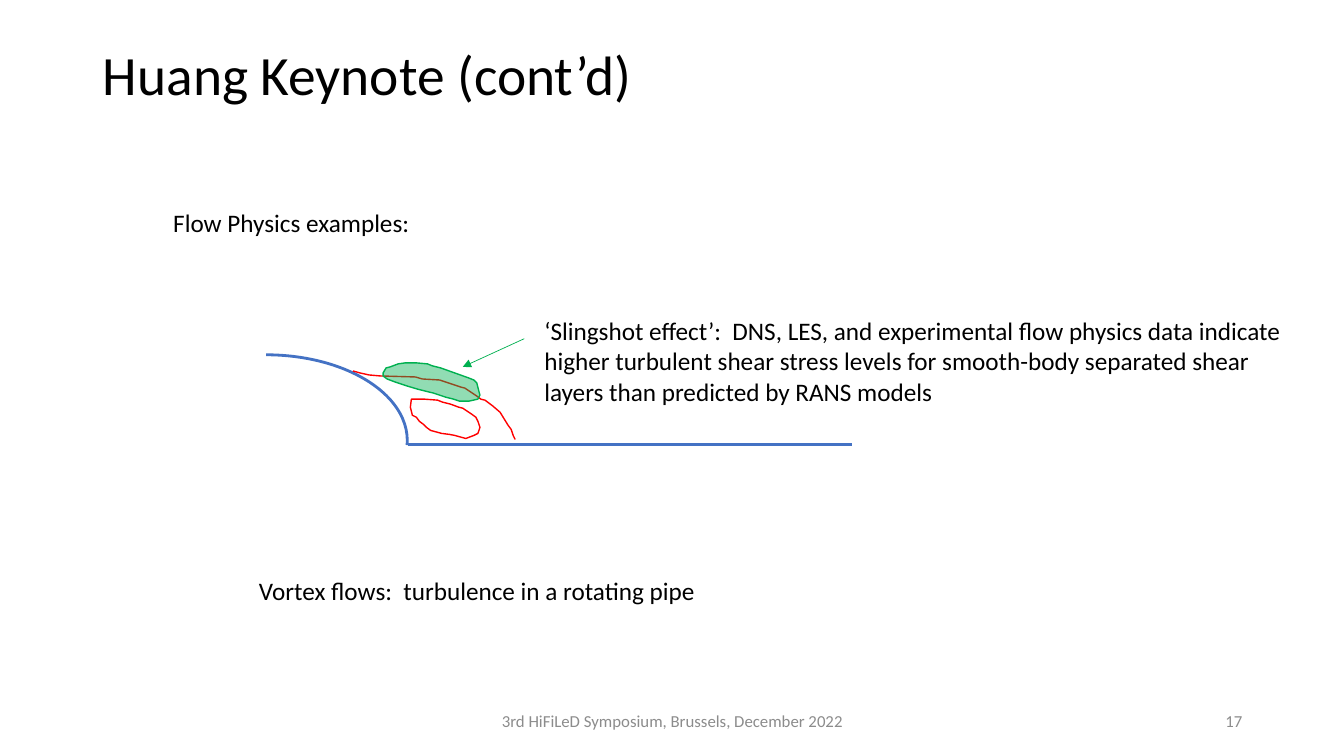
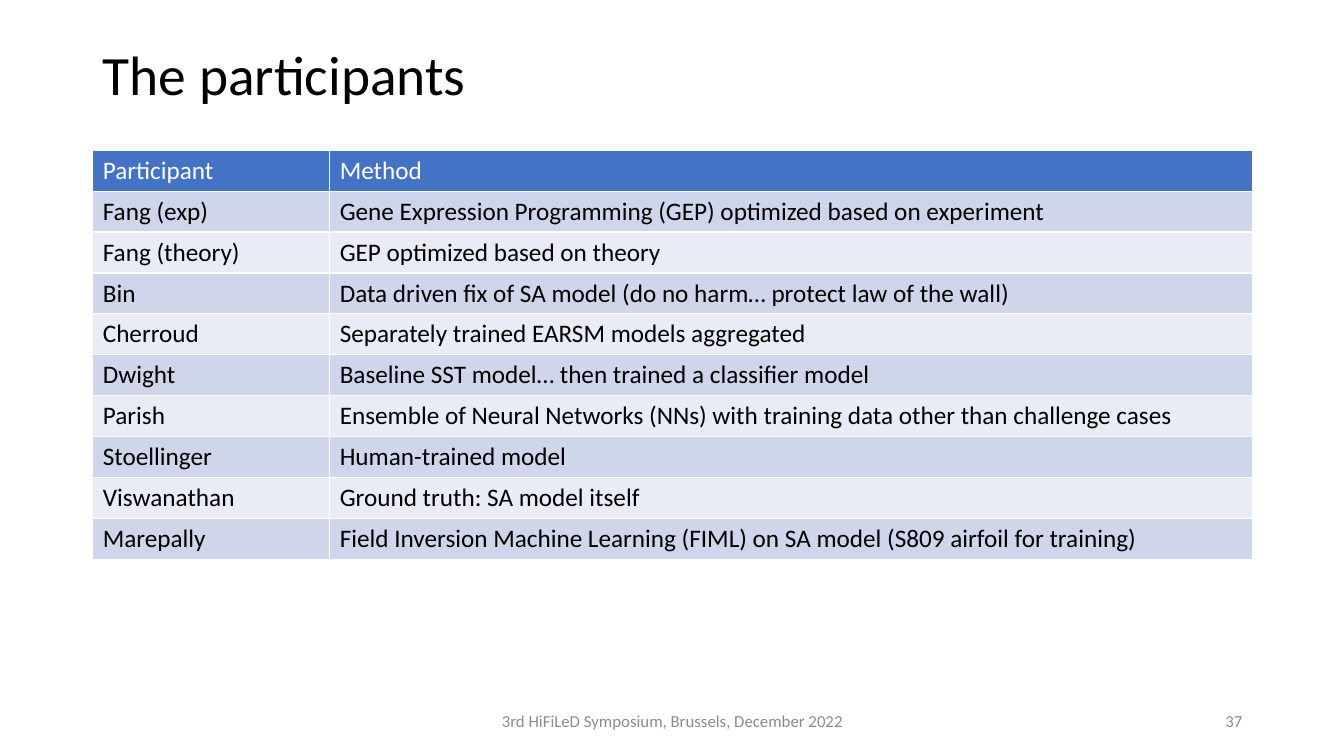
from lxml import etree
from pptx import Presentation
from pptx.dml import color as dml
from pptx.enum import shapes, text
from pptx.oxml import ns
from pptx.util import Inches, Pt

BLUE, RED, GREEN = "4472C4", "FF0000", "00B050"
BLACK, WHITE, GREY = "000000", "FFFFFF", "8C8C8C"
BANDS = ["E9EBF5", "CFD5EA"]


def rgb(value):
    return dml.RGBColor.from_string(value)


def write(frame, words, size=18, color=BLACK, align=text.PP_ALIGN.LEFT,
          anchor=text.MSO_ANCHOR.TOP, wrap=True, spacing=1.0):
    frame.word_wrap = wrap
    frame.vertical_anchor = anchor
    paragraph = frame.paragraphs[0]
    paragraph.alignment = align
    paragraph.line_spacing = spacing
    run = paragraph.add_run()
    run.text = words
    run.font.name = "Calibri"
    run.font.size = Pt(size)
    run.font.color.rgb = rgb(color)


deck = Presentation()
deck.slide_width, deck.slide_height = Inches(13.33), Inches(7.5)
layout = deck.slide_layouts[5]
heading = layout.placeholders[0]
heading.left, heading.top = Inches(0.92), Inches(0.4)
heading.width, heading.height = Inches(11.5), Inches(0.74)

pages = []
for title, number in [("Huang Keynote (cont’d)", "17"), ("The participants", "37")]:
    page = deck.slides.add_slide(layout)
    write(page.shapes.title.text_frame, title, size=39.6,
          anchor=text.MSO_ANCHOR.MIDDLE, spacing=0.9)
    for words, left, width, align in [
        ("3rd HiFiLeD Symposium, Brussels, December 2022", 4.42, 4.5, text.PP_ALIGN.CENTER),
        (number, 9.42, 3, text.PP_ALIGN.RIGHT),
    ]:
        footer = page.shapes.add_textbox(Inches(left), Inches(6.95), Inches(width), Inches(0.4))
        write(footer.text_frame, words, size=12, color=GREY, align=align,
              anchor=text.MSO_ANCHOR.MIDDLE)
    pages.append(page)
physics, participants = pages

body_curve = physics.shapes.add_shape(
    shapes.MSO_SHAPE.ARC, Inches(1.24), Inches(3.52), Inches(2.8), Inches(1.7))
body_curve.adjustments[0] = 162
body_curve.adjustments[1] = 1.11
body_curve.shadow.inherit = False
body_curve.fill.background()
body_curve.line.color.rgb = rgb(BLUE)
body_curve.line.width = Pt(2)

wall = physics.shapes.add_connector(
    shapes.MSO_CONNECTOR.STRAIGHT, Inches(4.05), Inches(4.41), Inches(8.45), Inches(4.41))

shear_layer = [
    (3.5, 3.68), (3.57, 3.7), (3.66, 3.72), (3.77, 3.73), (4.12, 3.74), (4.19, 3.76),
    (4.36, 3.77), (4.45, 3.8), (4.57, 3.84), (4.61, 3.85), (4.73, 3.93), (4.77, 3.96),
    (4.81, 3.97), (4.89, 4.03), (4.96, 4.09), (5.04, 4.22), (5.07, 4.26), (5.09, 4.32),
    (5.11, 4.36)]
recirculation = [
    (4.08, 3.96), (4.21, 3.96), (4.34, 3.97), (4.39, 3.99), (4.47, 4.01), (4.55, 4.04),
    (4.59, 4.05), (4.68, 4.11), (4.72, 4.14), (4.74, 4.18), (4.76, 4.24), (4.74, 4.3),
    (4.7, 4.32), (4.62, 4.35), (4.51, 4.32), (4.46, 4.31), (4.38, 4.3), (4.27, 4.27),
    (4.23, 4.24), (4.2, 4.21), (4.16, 4.18), (4.13, 4.14), (4.09, 4.12), (4.07, 4.04)]
high_stress = [
    (4.02, 3.6), (3.95, 3.61), (3.87, 3.64), (3.83, 3.65), (3.8, 3.7), (3.8, 3.73),
    (3.84, 3.76), (3.92, 3.79), (4.04, 3.83), (4.14, 3.86), (4.22, 3.88), (4.3, 3.9),
    (4.42, 3.94), (4.5, 3.96), (4.56, 3.98), (4.65, 3.98), (4.74, 3.96), (4.76, 3.92),
    (4.74, 3.84), (4.73, 3.8), (4.7, 3.77), (4.65, 3.75), (4.37, 3.65), (4.29, 3.63),
    (4.24, 3.61), (4.13, 3.6)]
for outline, color, closed in [
    (shear_layer, RED, False), (recirculation, RED, True), (high_stress, GREEN, True),
]:
    start, *rest = [(Inches(x), Inches(y)) for x, y in outline]
    builder = physics.shapes.build_freeform(*start)
    builder.add_line_segments(rest, close=closed)
    region = builder.convert_to_shape()
    region.shadow.inherit = False
    region.line.color.rgb = rgb(color)
    region.line.width = Pt(1)
    region.fill.background()
    if color == GREEN:
        region.fill.solid()
        region.fill.fore_color.rgb = rgb(GREEN)
        tint = region.fill._xPr.find(".//" + ns.qn("a:srgbClr"))
        etree.SubElement(tint, ns.qn("a:alpha"), val="43000")

pointer = physics.shapes.add_connector(
    shapes.MSO_CONNECTOR.STRAIGHT, Inches(5.2), Inches(3.36), Inches(4.59), Inches(3.64))
for stroke, color, weight in [(wall, BLUE, 2), (pointer, GREEN, 0.5)]:
    stroke.line.color.rgb = rgb(color)
    stroke.line.width = Pt(weight)
    etree.SubElement(stroke._element.spPr, ns.qn("a:effectLst"))
etree.SubElement(pointer.line._get_or_add_ln(), ns.qn("a:tailEnd"), type="triangle")

for words, left, top, width, height, wrap in [
    ("‘Slingshot effect’:  DNS, LES, and experimental flow physics data indicate higher "
     "turbulent shear stress levels for smooth-body separated shear layers than predicted "
     "by RANS models", 5.3, 3.08, 7.59, 1.01, True),
    ("Flow Physics examples:", 1.62, 2.01, 2.57, 0.4, False),
    ("Vortex flows:  turbulence in a rotating pipe", 2.47, 5.66, 4.58, 0.4, False),
]:
    remark = physics.shapes.add_textbox(Inches(left), Inches(top), Inches(width), Inches(height))
    write(remark.text_frame, words, wrap=wrap)

methods = [
    ("Participant", "Method"),
    ("Fang (exp)", "Gene Expression Programming (GEP) optimized based on experiment"),
    ("Fang (theory)", "GEP optimized based on theory"),
    ("Bin", "Data driven fix of SA model (do no harm… protect law of the wall)"),
    ("Cherroud", "Separately trained EARSM models aggregated"),
    ("Dwight", "Baseline SST model… then trained a classifier model"),
    ("Parish", "Ensemble of Neural Networks (NNs) with training data other than challenge cases"),
    ("Stoellinger", "Human-trained model"),
    ("Viswanathan", "Ground truth: SA model itself"),
    ("Marepally", "Field Inversion Machine Learning (FIML) on SA model (S809 airfoil for training)"),
]
roster = participants.shapes.add_table(
    len(methods), 2, Inches(0.92), Inches(1.49), Inches(11.5), Inches(4.06)).table
roster.columns[0].width = Inches(2.35)
roster.columns[1].width = Inches(9.15)
for row, entry in enumerate(methods):
    for column, words in enumerate(entry):
        cell = roster.cell(row, column)
        cell.fill.solid()
        cell.fill.fore_color.rgb = rgb(BANDS[row % 2] if row else BLUE)
        write(cell.text_frame, words, color=BLACK if row else WHITE)
        properties = cell._tc.get_or_add_tcPr()
        for position, side in enumerate(["lnL", "lnR", "lnT", "lnB"]):
            border = etree.Element(ns.qn("a:" + side), w=str(Pt(1)))
            paint = etree.SubElement(border, ns.qn("a:solidFill"))
            etree.SubElement(paint, ns.qn("a:srgbClr"), val=WHITE)
            properties.insert(position, border)

deck.save("out.pptx")
